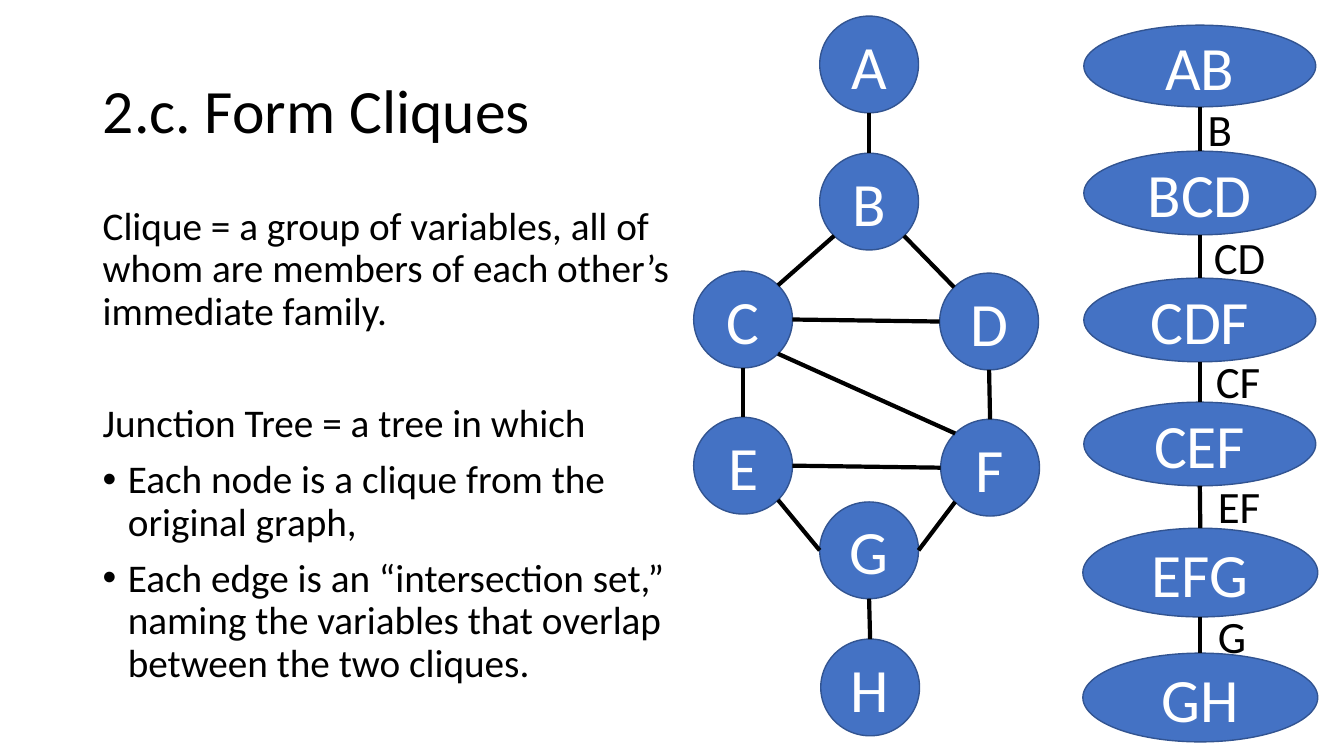
from lxml import etree
from pptx import Presentation
from pptx import util as u
from pptx.dml.color import RGBColor
from pptx.enum import shapes, text
from pptx.oxml import ns

EMU_PER_PX = 9144  # 100 px to the inch
COLORS = {"black": "000000", "white": "FFFFFF", "node": "4472C4", "outline": "325491"}
DIAGONAL = 0.146  # where an ellipse crosses the diagonal of its box
SITES = {
    "N": (0.5, 0), "S": (0.5, 1), "W": (0, 0.5), "E": (1, 0.5),
    "NW": (DIAGONAL, DIAGONAL), "NE": (1 - DIAGONAL, DIAGONAL),
    "SW": (DIAGONAL, 1 - DIAGONAL), "SE": (1 - DIAGONAL, 1 - DIAGONAL),
}

GRAPH_NODES = {
    "A": (813, 16), "B": (813, 152), "C": (688, 269), "D": (932, 271),
    "E": (688, 414), "F": (933, 416), "G": (813, 498), "H": (814, 634),
}
GRAPH_EDGES = [
    ("A", "S", "B", "N"), ("B", "SW", "C", "NE"), ("B", "SE", "D", "NW"),
    ("C", "S", "E", "N"), ("D", "S", "F", "N"), ("E", "SE", "G", "W"),
    ("F", "SW", "G", "E"), ("G", "S", "H", "N"), ("E", "E", "F", "W"),
    ("C", "SE", "F", "NW"), ("C", "E", "D", "W"),
]
CLIQUES = {
    "AB": (1075, 25, 230, 81), "BCD": (1075, 150, 230, 83),
    "CDF": (1075, 276, 230, 83), "CEF": (1075, 399, 230, 83),
    "EFG": (1074, 524, 233, 88), "GH": (1074, 648, 233, 88),
}
SEPARATORS = [
    ("B", 1188, 96, 45), ("CD", 1194, 223, 72), ("CF", 1196, 346, 65),
    ("EF", 1198, 470, 63), ("G", 1198, 599, 49),
]
BODY = [  # text, space before in points, bulleted
    ("Clique = a group of variables, all of whom are members of each other’s "
     "immediate family.", 10, False),
    ("Junction Tree = a tree in which", 50, False),
    ("Each node is a clique from the original graph,", 10, True),
    ("Each edge is an “intersection set,” naming the variables that overlap "
     "between the two cliques.", 10, True),
]


def px(*lengths):
    return [u.Emu(round(length * EMU_PER_PX)) for length in lengths]


def color(name):
    return RGBColor.from_string(COLORS[name])


class SlideBuilder:
    font = "Calibri"

    def __init__(self, slide):
        self.slide = slide

    def format_text(self, paragraph, size, color_name="black"):
        for run in paragraph.runs:
            run.font.name = self.font
            run.font.size = u.Pt(size)
            run.font.color.rgb = color(color_name)

    def title(self, words, box):
        shape = self.slide.shapes.title
        shape.left, shape.top, shape.width, shape.height = px(*box)
        frame = shape.text_frame
        frame.text = words
        frame.auto_size = text.MSO_AUTO_SIZE.NONE
        frame.vertical_anchor = text.MSO_ANCHOR.MIDDLE
        paragraph = frame.paragraphs[0]
        paragraph.alignment = text.PP_ALIGN.LEFT
        paragraph.line_spacing = 0.9
        self.format_text(paragraph, 44)

    def body(self, items, box):
        frame = self.slide.shapes.add_textbox(*px(*box)).text_frame
        frame.word_wrap = True
        frame.text = "\n".join(words for words, _, _ in items)
        for paragraph, (_, space, bulleted) in zip(frame.paragraphs, items):
            paragraph.line_spacing = 0.9
            paragraph.space_before = u.Pt(space)
            self.format_text(paragraph, 28)
            if bulleted:
                self.bullet(paragraph)

    def bullet(self, paragraph):
        properties = paragraph._p.get_or_add_pPr()
        indent = px(25)[0]
        properties.set("marL", str(indent))
        properties.set("indent", str(-indent))
        etree.SubElement(properties, ns.qn("a:buFont")).set("typeface", "Arial")
        etree.SubElement(properties, ns.qn("a:buChar")).set("char", "•")

    def label(self, words, box):
        frame = self.slide.shapes.add_textbox(*px(*box)).text_frame
        frame.word_wrap = False
        frame.auto_size = text.MSO_AUTO_SIZE.SHAPE_TO_FIT_TEXT
        frame.text = words
        self.format_text(frame.paragraphs[0], 32)

    def node(self, words, box):
        shape = self.slide.shapes.add_shape(shapes.MSO_SHAPE.OVAL, *px(*box))
        shape.shadow.inherit = False
        shape.fill.solid()
        shape.fill.fore_color.rgb = color("node")
        shape.line.color.rgb = color("outline")
        shape.line.width = u.Pt(1)
        frame = shape.text_frame
        frame.text = words
        frame.vertical_anchor = text.MSO_ANCHOR.MIDDLE
        frame.paragraphs[0].alignment = text.PP_ALIGN.CENTER
        self.format_text(frame.paragraphs[0], 44, "white")
        return shape

    def edge(self, start, start_site, end, end_site):
        """Draw a line between compass sites on the rims of two nodes."""
        points = []
        for shape, site in ((start, start_site), (end, end_site)):
            across, down = SITES[site]
            points += [u.Emu(round(shape.left + across * shape.width)),
                       u.Emu(round(shape.top + down * shape.height))]
        line = self.slide.shapes.add_connector(shapes.MSO_CONNECTOR.STRAIGHT, *points)
        line.line.color.rgb = color("black")
        line.line.width = u.Pt(3)
        etree.SubElement(line._element.spPr, ns.qn("a:effectLst"))


def main():
    presentation = Presentation()
    presentation.slide_width, presentation.slide_height = px(1333, 750)
    title_only = presentation.slide_layouts[5]
    builder = SlideBuilder(presentation.slides.add_slide(title_only))

    builder.title("2.c. Form Cliques", (92, 40, 584, 145))
    builder.body(BODY, (92, 200, 602, 530))

    nodes = {name: builder.node(name, (left, top, 98, 96))
             for name, (left, top) in GRAPH_NODES.items()}
    for start, start_site, end, end_site in GRAPH_EDGES:
        builder.edge(nodes[start], start_site, nodes[end], end_site)

    cliques = [builder.node(name, box) for name, box in CLIQUES.items()]
    for upper, lower in zip(cliques, cliques[1:]):
        builder.edge(upper, "S", lower, "N")
    for name, left, top, width in SEPARATORS:
        builder.label(name, (left, top, width, 64))

    presentation.save("out.pptx")


if __name__ == "__main__":
    main()
